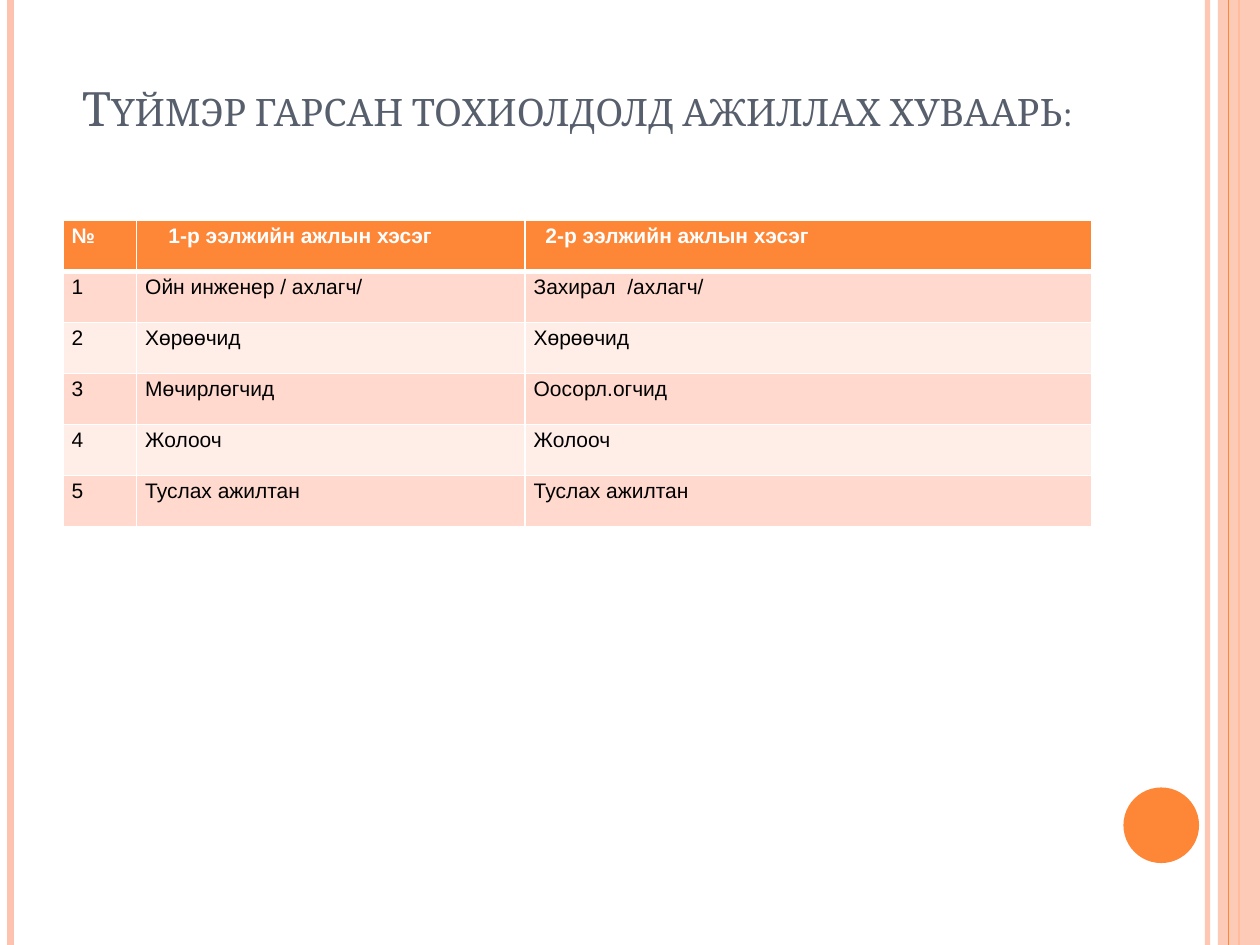
from lxml import etree
from pptx import Presentation
from pptx.dml.color import RGBColor
from pptx.enum.shapes import MSO_CONNECTOR, MSO_SHAPE
from pptx.enum.text import MSO_ANCHOR, MSO_AUTO_SIZE, PP_ALIGN
from pptx.oxml.ns import qn
from pptx.util import Pt

LINE = MSO_CONNECTOR.STRAIGHT
RECT, OVAL = MSO_SHAPE.RECTANGLE, MSO_SHAPE.OVAL
BOTTOM, NONE = MSO_ANCHOR.BOTTOM, MSO_AUTO_SIZE.NONE
LEFT, CENTER = PP_ALIGN.LEFT, PP_ALIGN.CENTER
ORANGE, PEACH, WHITE = "FE8637", "FEC3AE", "FFFFFF"
BANDS = ["FFD9CE", "FFEDE8"]
WIDE, HIGH = 720, 540


def paint(target, color, alpha=100):
    """Give a fill or line format's fill a solid colour, alpha in percent."""
    target.solid()
    target.fore_color.rgb = RGBColor.from_string(color)
    if alpha < 100:
        node = target._xPr.find(qn("a:solidFill"))[0]
        etree.SubElement(node, qn("a:alpha"), val=str(alpha * 1000))


def write(frame, text, size=12, font="Arial", color="000000", bold=False,
          align=LEFT, space=1.0, indent=0, caps=False):
    para = frame.paragraphs[0]
    para.alignment = align
    para.line_spacing = space
    if indent:
        para._p.get_or_add_pPr().set("marL", str(Pt(indent)))
    run = para.add_run()
    run.text = text
    run.font.size, run.font.name, run.font.bold = Pt(size), font, bold
    run.font.color.rgb = RGBColor.from_string(color)
    if caps:
        run._r.get_or_add_rPr().set("cap", "small")


deck = Presentation()
deck.slide_width, deck.slide_height = Pt(WIDE), Pt(HIGH)
slide = deck.slides.add_slide(deck.slide_layouts[5])
shapes = slide.shapes
paint(slide.background.fill, WHITE)

# Side stripes: None marks where the wide band lies between the lines
stripes = [(690, PEACH, 3, 93), (6, PEACH, 4.5, 100), (708, ORANGE, 1.5, 100),
           None, (702, ORANGE, 0.75, 100)]
for stripe in stripes:
    if stripe is None:
        band = shapes.add_shape(RECT, Pt(696), 0, Pt(24), Pt(HIGH))
        band.shadow.inherit = False
        paint(band.fill, PEACH, 87)
        band.line.fill.background()
        continue
    x, color, width, alpha = stripe
    line = shapes.add_connector(LINE, Pt(x), 0, Pt(x), Pt(HIGH))
    line.line.width = Pt(width)
    paint(line.line.fill, color, alpha)
    etree.SubElement(line._element.spPr, qn("a:effectLst"))

dot = shapes.add_shape(OVAL, Pt(642), Pt(450), Pt(43.2), Pt(43.2))
dot.shadow.inherit = False
paint(dot.fill, ORANGE)
dot.line.fill.background()

# Title
title = shapes.title
title.left, title.top, title.width, title.height = Pt(36), Pt(6), Pt(588), Pt(105.6)
frame = title.text_frame
frame.auto_size, frame.word_wrap = NONE, True
frame.vertical_anchor = BOTTOM
frame.margin_bottom = Pt(34)
write(frame, "Түймэр гарсан тохиолдолд ажиллах хуваарь:", size=27,
      font="Cambria", color="575F6D", align=CENTER, caps=True)

# Duty table
rows = [
    ("№", "1-р ээлжийн ажлын хэсэг", "2-р ээлжийн ажлын хэсэг"),
    ("1", "Ойн инженер / ахлагч/", "Захирал  /ахлагч/"),
    ("2", "Хөрөөчид", "Хөрөөчид"),
    ("3", "Мөчирлөгчид", "Оосорл.огчид"),
    ("4", "Жолооч", "Жолооч"),
    ("5", "Туслах ажилтан", "Туслах ажилтан"),
]
widths = [42, 222, 324]
indents = [0, 13.3, 6.7]
table = shapes.add_table(len(rows), len(widths), Pt(36), Pt(126),
                         Pt(sum(widths)), Pt(175)).table
for col, width in zip(table.columns, widths):
    col.width = Pt(width)

for r, row in enumerate(rows):
    table.rows[r].height = Pt(29.16)
    head = r == 0
    edges = {"L": 1, "R": 1, "T": 3 if r == 1 else 1, "B": 3 if head else 1}
    for c, text in enumerate(row):
        cell = table.cell(r, c)
        cell.margin_left = cell.margin_right = Pt(5)
        cell.margin_top = cell.margin_bottom = 0
        props = cell._tc.get_or_add_tcPr()
        for side, width in edges.items():
            edge = etree.SubElement(props, qn("a:ln" + side), w=str(Pt(width)))
            fill = etree.SubElement(edge, qn("a:solidFill"))
            etree.SubElement(fill, qn("a:srgbClr"), val=WHITE)
        paint(cell.fill, ORANGE if head else BANDS[(r - 1) % 2])
        write(cell.text_frame, text, color=WHITE if head else "000000",
              bold=head, space=1.15, indent=indents[c] if head else 0)

deck.save("out.pptx")
